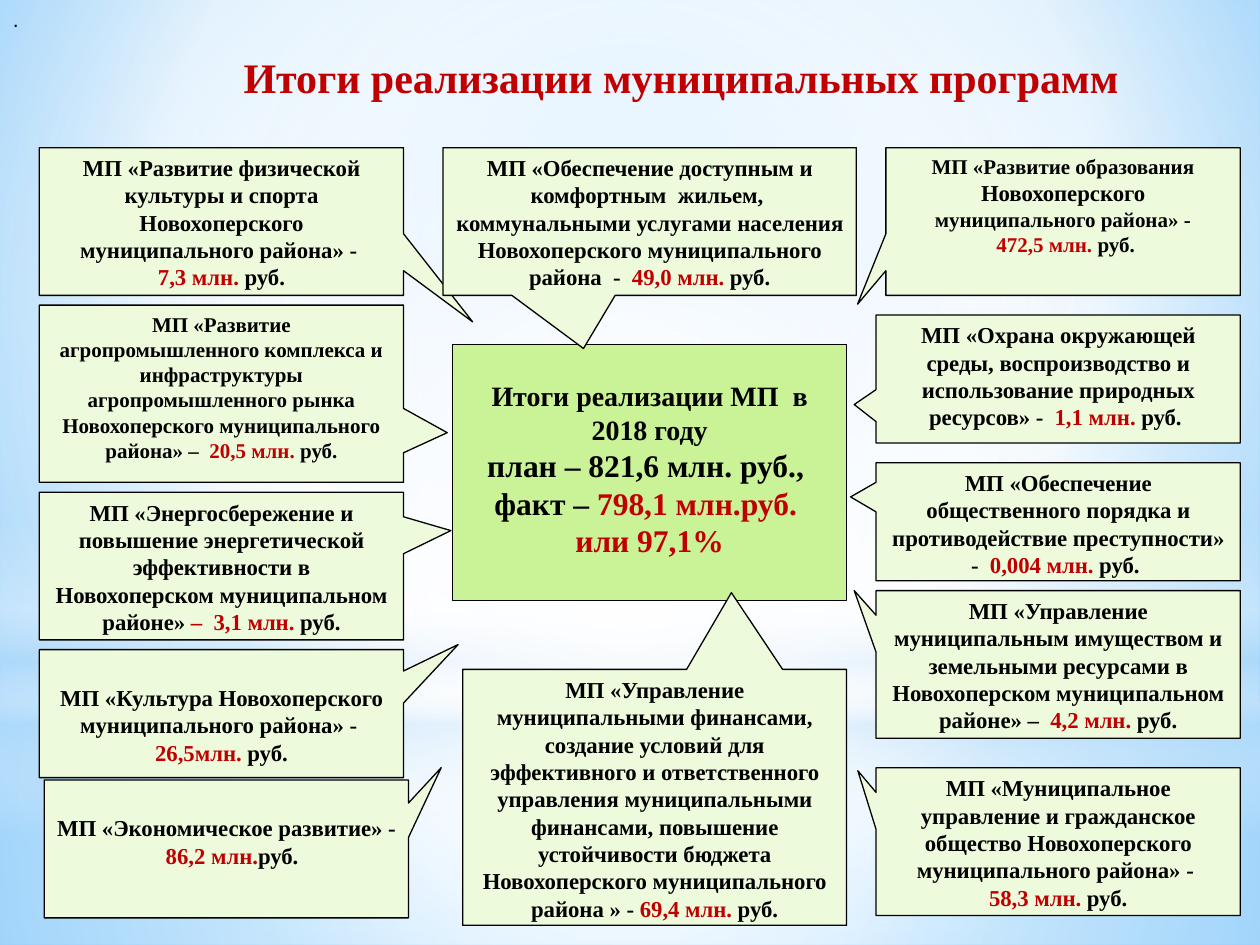
"""Build the slide on the results of the municipal programmes."""
from itertools import cycle

from lxml.etree import SubElement
from pptx import Presentation
from pptx.dml.color import RGBColor
from pptx.enum.shapes import MSO_SHAPE
from pptx.enum.text import MSO_ANCHOR, PP_ALIGN
from pptx.oxml.ns import qn
from pptx.util import Inches, Pt

BLACK, RED = "000000", "C00000"
PALE, GREEN = "EDFBDC", "CAF297"
SERIF = "Times New Roman"
COLUMNS, ROWS = 128, 96

deck = Presentation()
deck.slide_width, deck.slide_height = Inches(10), Inches(7.5)
column, row = deck.slide_width / COLUMNS, deck.slide_height / ROWS
slide = deck.slides.add_slide(deck.slide_layouts[6])
shapes = slide.shapes


def paint_gradient(fill, element, stops, focus):
    """Give a fill the stops and a focus rectangle, or a downward run."""
    fill.gradient()
    gradient = element.xpath(".//a:gradFill")[0]
    for child in list(gradient):
        gradient.remove(child)
    stop_list = SubElement(gradient, qn("a:gsLst"))
    for position, color, opacity in stops:
        stop = SubElement(stop_list, qn("a:gs"), pos=str(position * 1000))
        tint = SubElement(stop, qn("a:srgbClr"), val=color)
        SubElement(tint, qn("a:alpha"), val=str(opacity * 1000))
    if focus:
        route = SubElement(gradient, qn("a:path"), path="circle")
        edges = {side: str(share * 1000) for side, share in zip("ltrb", focus)}
        SubElement(route, qn("a:fillToRect"), **edges)
    else:
        SubElement(gradient, qn("a:lin"), ang="5400000", scaled="0")


def write(box, paragraphs, font_name=SERIF, bold=True):
    """Write centred paragraphs whose odd segments between bars are red."""
    frame = box.text_frame
    frame.word_wrap = True
    frame.vertical_anchor = MSO_ANCHOR.TOP
    for index, (sizes, text) in enumerate(paragraphs):
        para = frame.add_paragraph() if index else frame.paragraphs[0]
        para.alignment = PP_ALIGN.CENTER
        for segment, size, color in zip(text.split("|"), cycle(sizes), cycle((BLACK, RED))):
            if segment:
                span = para.add_run()
                span.text = segment
                look = {"name": font_name, "size": Pt(size), "bold": bold}
                for name, value in look.items():
                    setattr(span.font, name, value)
                span.font.color.rgb = RGBColor.from_string(color)


middle = (50, 50, 50, 50)
paint_gradient(slide.background.fill, slide.element,
               [(0, "9ED5FF", 100), (60, "FFFFFF", 100), (100, "5BB9FF", 100)],
               (20, 10, 20, 60))

layers = [
    (MSO_SHAPE.RECTANGLE, 71.4, 24.6, middle,
     [(0, "FFFFFF", 91), (37, "FFFFFF", 76), (100, "B4DCFA", 79)]),
    (MSO_SHAPE.RECTANGLE, 0, 71.4, middle,
     [(0, "FFFFFF", 89), (48, "FFFFFF", 62), (100, "B4DCFA", 79)]),
    (MSO_SHAPE.RECTANGLE, 52.8, 32, None,
     [(0, "FFFFFF", 0), (29, "FFFFFF", 30), (45, "B4DCFA", 40),
      (55, "FFFFFF", 26), (65, "B4DCFA", 60), (100, "FFFFFF", 0)]),
    (MSO_SHAPE.OVAL, 22.4, 71.4, middle, [(0, "FFFFFF", 100), (56, "FFFFFF", 0)]),
]
for kind, top, height, focus, stops in layers:
    layer = shapes.add_shape(kind, 0, int(top * row), deck.slide_width, int(height * row))
    layer.shadow.inherit = False
    layer.line.fill.background()
    paint_gradient(layer.fill, layer.element, stops, focus)

title = shapes.add_textbox(Inches(1.06), Inches(0.36), Inches(8.69), Inches(0.5))
write(title, [((24,), "|Итоги реализации муниципальных программ")])

small, normal = (12,), (13,)
high, low = 0.05, 0.27
boxes = [
    ((4, 15, 37, 15), (0.69, 0.68), high, [
        (normal, "МП «Развитие физической культуры и спорта Новохоперского муниципального района» - "),
        (normal, "|7,3 млн. |руб.")]),
    ((46, 35, 40, 26), None, low, [
        ((16,), "Итоги реализации МП  в 2018 году"),
        ((18,), "план – 821,6 млн. руб., "),
        ((18,), "факт – |798,1 млн.руб. "),
        ((18,), "|или 97,1%")]),
    ((45, 15, 42, 15), (-0.16, 0.86), high, [
        (normal, "МП «Обеспечение доступным и комфортным  жильем,  коммунальными услугами населения "
                 "Новохоперского муниципального района  -  |49,0 млн. |руб.")]),
    ((90, 15, 36, 15), (-0.58, 0.56), high, [
        ((12, 12, 13, 12, 12), "МП «Развитие образования ||Новохоперского|| муниципального района» -"),
        (small, " |472,5 млн. |руб.")]),
    ((89, 32, 37, 13), (-0.56, 0.2), high, [
        (normal, "МП «Охрана окружающей среды, воспроизводство и использование природных "
                 "ресурсов» -  |1,1 млн. |руб. ")]),
    ((89, 47, 37, 12), (-0.57, -0.21), high, [
        (normal, "МП «Обеспечение общественного порядка и противодействие "
                 "преступности» -  |0,004 млн. |руб. ")]),
    ((4, 66, 37, 13), (0.65, -0.54), low, [
        (normal, "МП «Культура Новохоперского муниципального района» - "),
        (normal, "|26,5млн.| руб.")]),
    ((4.5, 79.25, 37, 14), (0.59, -0.59), low, [
        (normal, "МП «Экономическое развитие» -   |86,2 млн.|руб.")]),
    ((47, 68, 39, 26), (0.2, -0.8), high, [
        (normal, "МП «Управление муниципальными финансами, создание условий для эффективного и "
                 "ответственного управления муниципальными финансами, повышение устойчивости "
                 "бюджета Новохоперского муниципального района » - |69,4 млн. |руб.")]),
    ((4, 31, 37, 18), (0.62, 0.22), high, [
        (small, "МП «Развитие агропромышленного комплекса и инфраструктуры агропромышленного "
                "рынка Новохоперского муниципального района» –  |20,5 млн. |руб.")]),
    ((4, 50, 37, 15), (0.63, -0.24), high, [
        (normal, "МП «Энергосбережение и повышение энергетической эффективности в "
                 "Новохоперском муниципальном районе» |–  3,1 млн. |руб.")]),
    ((89, 60, 37, 15), (-0.56, -0.5), high, [
        (normal, "МП «Управление муниципальным имуществом и земельными ресурсами в "
                 "Новохоперском муниципальном районе» –  |4,2 млн. |руб.")]),
    ((89, 78, 37, 15), (-0.55, -0.48), high, [
        (normal, "МП «Муниципальное управление и гражданское общество Новохоперского "
                 "муниципального района» - "),
        (normal, "|58,3 млн. |руб.")]),
]
for (left, top, width, height), tail, inset, paragraphs in boxes:
    kind = MSO_SHAPE.RECTANGULAR_CALLOUT if tail else MSO_SHAPE.RECTANGLE
    box = shapes.add_shape(kind, int(left * column), int(top * row),
                           int(width * column), int(height * row))
    for index, offset in enumerate(tail or ()):
        box.adjustments[index] = offset
    box.shadow.inherit = False
    box.fill.solid()
    box.fill.fore_color.rgb = RGBColor.from_string(PALE if tail else GREEN)
    box.line.color.rgb = RGBColor.from_string(BLACK)
    box.line.width = Pt(0.75)
    box.text_frame.margin_top = Inches(inset)
    write(box, paragraphs)

dot = shapes.add_textbox(0, 0, Inches(0.25), Inches(0.3))
write(dot, [(small, ".")], "Arial", False)
dot.text_frame.word_wrap = False
dot.text_frame.vertical_anchor = MSO_ANCHOR.MIDDLE

deck.save("out.pptx")
